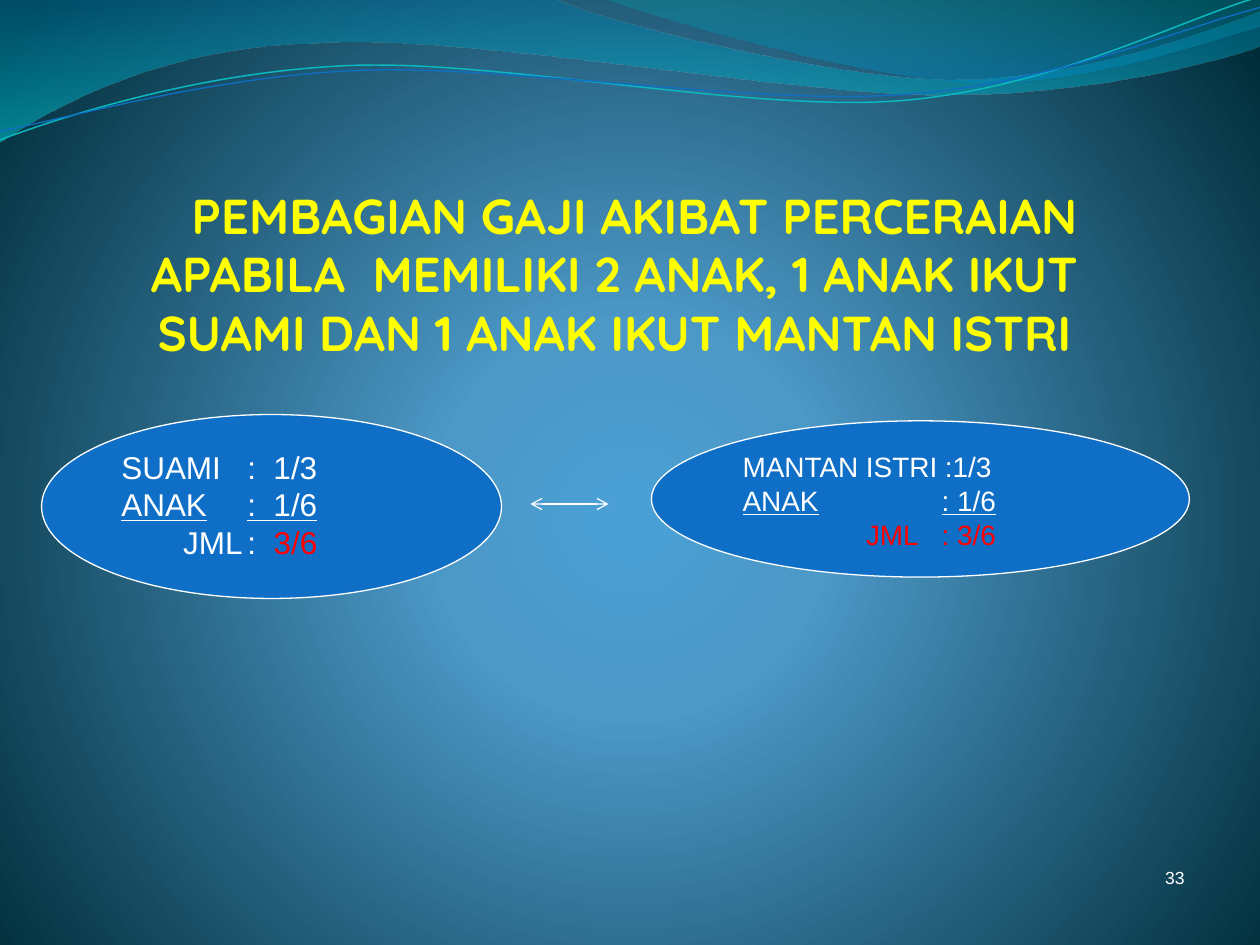
from math import cos, radians, sin

from lxml import etree
from pptx import Presentation
from pptx.dml.color import RGBColor
from pptx.enum.shapes import MSO_CONNECTOR, MSO_SHAPE
from pptx.enum.text import MSO_ANCHOR, MSO_AUTO_SIZE, PP_ALIGN
from pptx.oxml.ns import qn
from pptx.util import Inches, Pt

ELLIPSE, STRAIGHT = MSO_SHAPE.OVAL, MSO_CONNECTOR.STRAIGHT
TOP, BOTTOM, NO_FIT = MSO_ANCHOR.TOP, MSO_ANCHOR.BOTTOM, MSO_AUTO_SIZE.NONE
CENTER, RIGHT, JUSTIFY = PP_ALIGN.CENTER, PP_ALIGN.RIGHT, PP_ALIGN.JUSTIFY

WHITE = RGBColor(0xFF, 0xFF, 0xFF)
YELLOW = RGBColor(0xFF, 0xFF, 0x00)
RED = RGBColor(0xFF, 0x00, 0x00)
BLUE = RGBColor(0x0F, 0x6F, 0xC6)
TEAL = RGBColor(0x0A, 0xB8, 0xBF)
SKY = RGBColor(0x4A, 0xA0, 0xD6)
STEEL = RGBColor(0x4C, 0x98, 0xC7)
NIGHT = RGBColor(0x00, 0x2C, 0x38)
OCEAN = RGBColor(0x00, 0x74, 0xA1)
AQUA = RGBColor(0x00, 0xC6, 0xCF)
LAGOON = RGBColor(0x00, 0xA1, 0xA9)
AZURE = RGBColor(0x00, 0x8B, 0xBF)

# Each outline is a start point, then lines (2 numbers) and curves (6 numbers)
WIDE_WAVE = [(0, 0), (4.4, -0.01), (4.76, 0.17, 6.64, 0.63, 7.58, 0.63),
             (8.53, 0.63, 9.58, 0.26, 10, 0.09), (10.01, 0.36),
             (9.83, 0.44, 8.7, 0.76, 7.46, 0.75), (6.22, 0.75, 3.82, 0.28, 2.57, 0.34),
             (1.29, 0.36, 0.46, 0.83, -0.01, 1.13), (0, 0)]
CORNER_WAVE = [(4.79, -0.01), (5.09, 0.11, 6.82, 0.62, 7.69, 0.65),
               (8.56, 0.69, 9.61, 0.32, 10, 0.21), (10, 0), (4.79, -0.01)]
TEAL_CURVE = [(0, 1.11), (0.48, 0.93, 1.58, 0.57, 2.77, 0.52),
              (3.95, 0.47, 5.93, 0.89, 7.13, 0.8), (8.33, 0.71, 9.38, 0.15, 9.98, -0.02)]
BLUE_CURVE = [(0, 1.04), (0.47, 0.96, 1.64, 0.61, 2.83, 0.56),
              (4.03, 0.51, 5.97, 0.84, 7.17, 0.75), (8.36, 0.67, 9.41, 0.21, 10, 0.06)]
CURVE_TILT = -2.7


def write(paragraph, text, size=18, color=WHITE, font="Arial", bold=False, underline=False):
    """Add text to a paragraph; a newline becomes a line break."""
    for number, line in enumerate(text.split("\n")):
        if number:
            paragraph.add_line_break()
        run = paragraph.add_run()
        run.text = line
        run.font.size, run.font.name = Pt(size), font
        run.font.bold, run.font.underline = bold, underline
        run.font.color.rgb = color


def set_gradient(element, stops, angle=None):
    """Refill a gradient with (position, colour, opacity) stops; no angle means circular."""
    gradient = element.find(".//" + qn("a:gradFill"))
    gradient.clear()
    stop_list = etree.SubElement(gradient, qn("a:gsLst"))
    for position, color, opacity in stops:
        stop = etree.SubElement(stop_list, qn("a:gs"), pos=str(position * 1000))
        tint = etree.SubElement(stop, qn("a:srgbClr"), val=str(color))
        if opacity < 100:
            etree.SubElement(tint, qn("a:alpha"), val=str(opacity * 1000))
    if angle is None:
        circle = etree.SubElement(gradient, qn("a:path"), path="circle")
        etree.SubElement(circle, qn("a:fillToRect"), l="10000", t="110000", r="10000", b="100000")
    else:
        etree.SubElement(gradient, qn("a:lin"), ang=str(angle * 60000), scaled="0")


def turn(point, pivot, degrees):
    """Turn a point clockwise around a pivot."""
    dx, dy = point[0] - pivot[0], point[1] - pivot[1]
    c, s = cos(radians(degrees)), sin(radians(degrees))
    return pivot[0] + dx * c - dy * s, pivot[1] + dx * s + dy * c


class SlideBuilder:
    line_width = Pt(0.75)

    def __init__(self, slide):
        self.slide = slide

    def background(self, stops):
        self.slide.background.fill.gradient()
        set_gradient(self.slide.element, stops)

    def freeform(self, outline, closed, tilt=0, pivot=(0, 0)):
        """Draw all points as a polygon, then join each curve's three points into one curve."""
        points = [turn(segment[i:i + 2], pivot, -tilt)
                  for segment in outline for i in range(0, len(segment), 2)]
        start, *others = [(Inches(x), Inches(y)) for x, y in points]
        builder = self.slide.shapes.build_freeform(*start, scale=1.0)
        builder.add_line_segments(others, close=closed)
        shape = builder.convert_to_shape()
        shape.rotation = tilt % 360
        shape.shadow.inherit = False
        lines = iter(list(shape.element.iter(qn("a:lnTo"))))
        for segment in outline[1:]:
            line = next(lines)
            if len(segment) == 6:
                line.addprevious(curve := etree.Element(qn("a:cubicBezTo")))
                for part in (line, next(lines), next(lines)):
                    curve.append(part[0])
                    part.getparent().remove(part)
        return shape

    def wave(self, outline, stops):
        shape = self.freeform(outline, closed=True)
        shape.fill.gradient()
        set_gradient(shape.element, stops, angle=90)
        shape.line.fill.background()

    def curve(self, outline, color, width, pivot):
        shape = self.freeform(outline, closed=False, tilt=CURVE_TILT, pivot=pivot)
        shape.fill.background()
        shape.line.color.rgb, shape.line.width = color, Pt(width)

    def title(self, text, left, top, width, height, first_indent):
        shape = self.slide.shapes.title
        shape.left, shape.top = Inches(left), Inches(top)
        shape.width, shape.height = Inches(width), Inches(height)
        frame = shape.text_frame
        frame.word_wrap, frame.auto_size, frame.vertical_anchor = True, NO_FIT, BOTTOM
        paragraph = frame.paragraphs[0]
        paragraph.alignment = CENTER
        paragraph._p.get_or_add_pPr().set("indent", str(Inches(first_indent)))
        write(paragraph, text, size=28, color=YELLOW, font="Quicksand", bold=True)

    def page_number(self, text, left, top, width, height):
        box = self.slide.shapes.add_textbox(*map(Inches, (left, top, width, height)))
        box.text_frame.word_wrap = True
        paragraph = box.text_frame.paragraphs[0]
        paragraph.alignment = RIGHT
        write(paragraph, text, size=10)

    def share_ellipse(self, lines, left, top, width, height, size, tabs):
        """Each line is a list of (text, format) runs, aligned on tab stops."""
        shape = self.slide.shapes.add_shape(ELLIPSE, *map(Inches, (left, top, width, height)))
        shape.shadow.inherit = False
        shape.fill.solid()
        shape.fill.fore_color.rgb = BLUE
        shape.line.color.rgb, shape.line.width = WHITE, self.line_width
        frame = shape.text_frame
        frame.word_wrap, frame.vertical_anchor = True, TOP
        for number, runs in enumerate(lines):
            paragraph = frame.add_paragraph() if number else frame.paragraphs[0]
            paragraph.alignment = JUSTIFY
            tab_list = etree.SubElement(paragraph._p.get_or_add_pPr(), qn("a:tabLst"))
            # Only the total line uses the first stop
            for tab in tabs if number == len(lines) - 1 else tabs[1:]:
                etree.SubElement(tab_list, qn("a:tab"), pos=str(Inches(tab)), algn="l")
            for text, text_format in runs:
                write(paragraph, text, size=size, **text_format)

    def double_arrow(self, x1, y1, x2, y2):
        arrow = self.slide.shapes.add_connector(STRAIGHT, *map(Inches, (x1, y1, x2, y2)))
        arrow.line.color.rgb, arrow.line.width = WHITE, self.line_width
        line = arrow.line._get_or_add_ln()
        for end in ("a:headEnd", "a:tailEnd"):
            etree.SubElement(line, qn(end), type="arrow")
        etree.SubElement(arrow.element.spPr, qn("a:effectLst"))


def main():
    presentation = Presentation()
    presentation.slide_width, presentation.slide_height = Inches(10), Inches(7.5)
    builder = SlideBuilder(presentation.slides.add_slide(presentation.slide_layouts[5]))

    # Background and waves
    builder.background([(0, SKY, 100), (25, STEEL, 100), (100, NIGHT, 100)])
    builder.wave(WIDE_WAVE, [(0, OCEAN, 45), (100, AQUA, 55)])
    builder.wave(CORNER_WAVE, [(0, LAGOON, 30), (80, AZURE, 45)])
    builder.curve(TEAL_CURVE, TEAL, 0.85, pivot=(4.99, 0.58))
    builder.curve(BLUE_CURVE, BLUE, 0.75, pivot=(5, 0.59))

    # Title and page number
    builder.title("PEMBAGIAN GAJI AKIBAT PERCERAIAN\nAPABILA  MEMILIKI 2 ANAK, "
                  "1 ANAK IKUT SUAMI DAN 1 ANAK IKUT MANTAN ISTRI",
                  0.58, 0.92, 8.59, 2, first_indent=0.32)
    builder.page_number("33", 7.17, 6.83, 2.33, 0.5)

    # Shares of each parent
    underlined, red = {"underline": True}, {"color": RED}
    builder.share_ellipse([[("SUAMI\t:  1/3", {})],
                           [("ANAK\t:  1/6", underlined)],
                           [("\tJML\t:  ", {}), ("3/6", red)]],
                          0.33, 3.29, 3.65, 1.46, size=18, tabs=(0.49, 1))
    builder.share_ellipse([[("MANTAN ISTRI :1/3", {})],
                           [("ANAK\t: 1/6", underlined)],
                           [("\tJML\t: 3/6", red)]],
                          5.17, 3.34, 4.27, 1.24, size=16, tabs=(0.98, 1.58))
    builder.double_arrow(4.21, 4, 4.83, 4)

    presentation.save("out.pptx")


if __name__ == "__main__":
    main()
